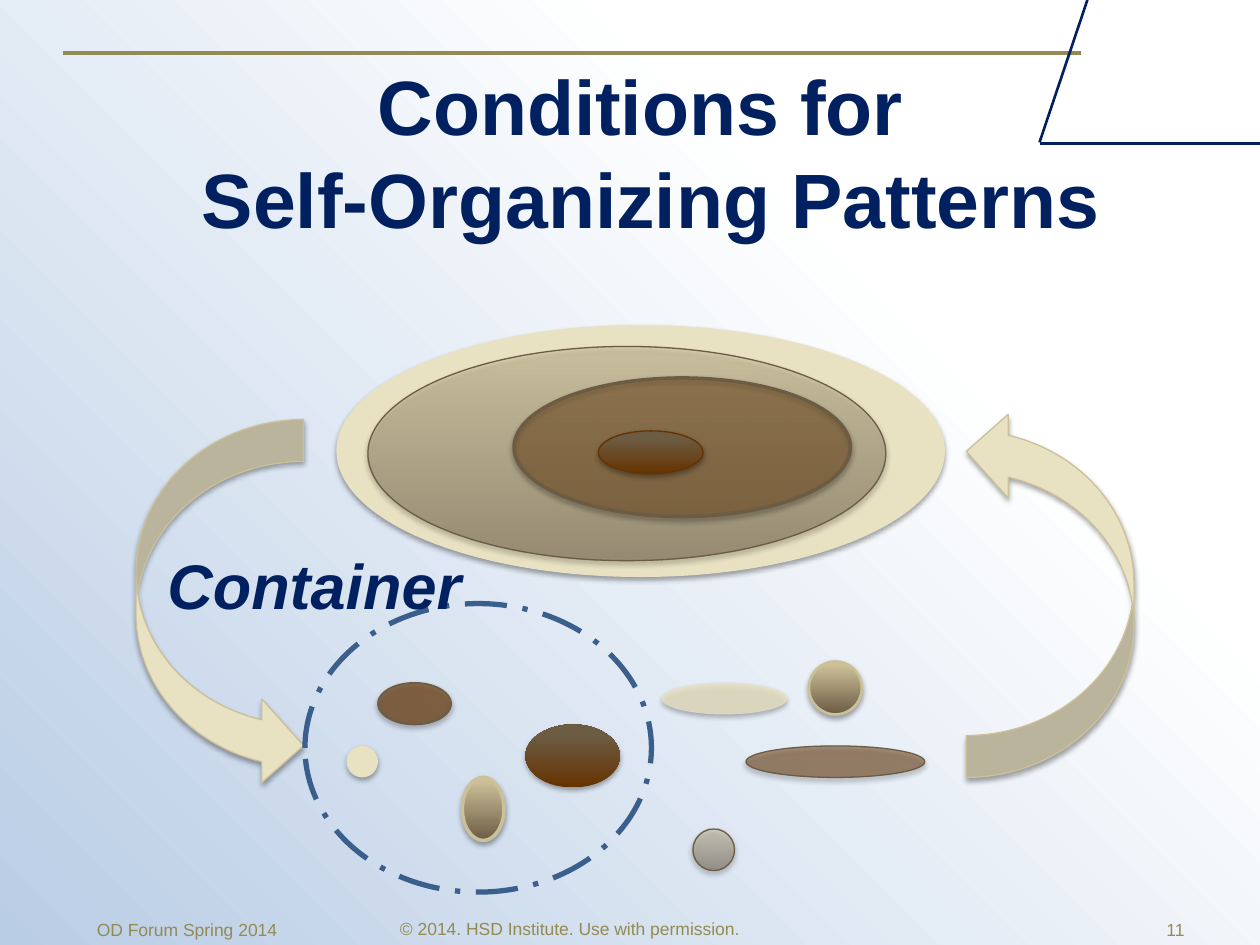
from dataclasses import dataclass
from typing import Optional

import lxml.etree
import pptx
import pptx.dml.color
import pptx.enum.dml
import pptx.enum.shapes
import pptx.enum.text
import pptx.oxml.ns
import pptx.util

Inches = pptx.util.Inches
Pt = pptx.util.Pt
RGB = pptx.dml.color.RGBColor
Align = pptx.enum.text.PP_ALIGN
Anchor = pptx.enum.text.MSO_ANCHOR
Kind = pptx.enum.shapes.MSO_SHAPE
qn = pptx.oxml.ns.qn

NAVY = RGB(0x00, 0x20, 0x60)
OLIVE = RGB(0x94, 0x8A, 0x54)
CREAM = RGB(0xE8, 0xE1, 0xC2)
SAND = RGB(0xCC, 0xC0, 0x99)
TAUPE = RGB(0x6C, 0x5C, 0x44)
BROWN = RGB(0x66, 0x33, 0x00)
BLUE = RGB(0x3A, 0x5F, 0x8C)
MIST = RGB(0xE1, 0xE8, 0xF5)
SKY = RGB(0xB9, 0xCD, 0xE5)
WHITE = RGB(0xFF, 0xFF, 0xFF)
BLACK = RGB(0x00, 0x00, 0x00)


@dataclass
class Stop:
    pos: int
    color: RGB
    alpha: int = 100


@dataclass
class Item:
    """A shadowed shape; one stop is a plain fill, more are a gradient."""
    box: tuple
    stops: list
    edge: Optional[RGB] = None
    width: float = 0.75
    kind: Kind = Kind.OVAL
    flip: bool = False


@dataclass
class Label:
    box: tuple
    text: str
    size: int = 10
    color: RGB = OLIVE
    align: Align = Align.LEFT
    anchor: Anchor = Anchor.MIDDLE
    bold: bool = False
    italic: bool = False


def plain(color: RGB, alpha: int = 100) -> list:
    return [Stop(0, color, alpha)]


STONE = [Stop(0, TAUPE), Stop(94, SAND)]
HAZE = [Stop(0, TAUPE, 50), Stop(94, SAND, 50)]
EARTH = [Stop(0, BROWN), Stop(84, TAUPE)]
ARROW = Kind.CURVED_RIGHT_ARROW

ITEMS = [
    Item((1.08, 3.33, 1.33, 2.92), plain(CREAM), SAND, kind=ARROW),
    # nested pattern
    Item((2.67, 2.58, 4.83, 2), plain(CREAM)),
    Item((2.92, 2.75, 4.11, 1.7), HAZE, TAUPE),
    Item((4.08, 3, 2.67, 1.1), plain(BROWN, 40), TAUPE, 2),
    Item((4.75, 3.42, 0.83, 0.34), EARTH, BROWN),
    Item((7.67, 3.25, 1.33, 2.92), plain(CREAM), SAND, kind=ARROW, flip=True),
    # loose parts
    Item((2.75, 5.92, 0.25, 0.25), plain(CREAM)),
    Item((3, 5.42, 0.58, 0.33), plain(BROWN, 65), TAUPE, 1),
    Item((3.67, 6.17, 0.33, 0.5), STONE, SAND, 2),
    Item((4.17, 5.75, 0.75, 0.5), EARTH),
    Item((5.25, 5.42, 1, 0.25), plain(CREAM, 80)),
    Item((5.92, 5.92, 1.42, 0.25), plain(BROWN, 50), TAUPE),
    Item((5.5, 6.58, 0.33, 0.33), HAZE + [Stop(100, MIST)], TAUPE),
    Item((6.42, 5.25, 0.42, 0.42), STONE, SAND, 1.5),
]

RULES = [
    ((0.5, 0.42, 8.58, 0.42), OLIVE, 2.25),
    ((8.63, 0, 8.25, 1.13), NAVY, 1.5),
    ((10, 1.14, 8.25, 1.14), NAVY, 1.5),
]

TITLE = Label((0.17, 0.56, 10, 1.28), "Conditions for \nSelf-Organizing Patterns",
              44, NAVY, Align.CENTER, bold=True)
LABELS = [
    Label((1.23, 4.29, 4.42, 1.92), "Container", 36, NAVY,
          anchor=Anchor.TOP, bold=True, italic=True),
    Label((0.5, 7.17, 8.08, 0.4), "© 2014. HSD Institute. Use with permission. ",
          align=Align.CENTER),
    Label((7.17, 7.18, 2.33, 0.4), "11", align=Align.RIGHT),
    Label((0.67, 7.18, 2.33, 0.4), "OD Forum Spring 2014"),
]


def add_tint(parent, color: RGB, alpha: int) -> None:
    """Add a colour element with its opacity in percent."""
    tint = lxml.etree.SubElement(parent, qn("a:srgbClr"), val=str(color))
    if alpha < 100:
        lxml.etree.SubElement(tint, qn("a:alpha"), val=str(alpha * 1000))


def paint(fill, root, stops: list, angle: int = 90) -> None:
    """Fill with the stops; the angle runs counter-clockwise."""
    if len(stops) == 1:
        fill.solid()
        fill.fore_color.rgb = stops[0].color
        node = root.find(".//" + qn("a:solidFill"))
        node.clear()
        add_tint(node, stops[0].color, stops[0].alpha)
        return
    fill.gradient()
    fill.gradient_angle = angle
    node = root.find(".//" + qn("a:gsLst"))
    node.clear()
    for stop in stops:
        part = lxml.etree.SubElement(node, qn("a:gs"), pos=str(stop.pos * 1000))
        add_tint(part, stop.color, stop.alpha)


def add_item(slide, item: Item) -> None:
    shape = slide.shapes.add_shape(item.kind, *map(Inches, item.box))
    paint(shape.fill, shape.element, item.stops)
    if item.edge is None:
        shape.line.fill.background()
    else:
        shape.line.color.rgb = item.edge
        shape.line.width = Pt(item.width)
    if item.flip:
        frame = shape.element.spPr.find(qn("a:xfrm"))
        frame.set("flipH", "1")
        frame.set("flipV", "1")
    shape.shadow.inherit = False
    glow = lxml.etree.SubElement(
        shape.element.spPr.find(qn("a:effectLst")), qn("a:outerShdw"),
        blurRad=str(Pt(3.1)), dist=str(Pt(1.8)), dir="5400000", rotWithShape="0")
    add_tint(glow, BLACK, 35)


def add_rule(slide, ends: tuple, color: RGB, width: float) -> None:
    straight = pptx.enum.shapes.MSO_CONNECTOR.STRAIGHT
    rule = slide.shapes.add_connector(straight, *map(Inches, ends))
    rule.line.color.rgb = color
    rule.line.width = Pt(width)
    lxml.etree.SubElement(rule.element.spPr, qn("a:effectLst"))


def add_ring(slide) -> None:
    ring = slide.shapes.add_shape(Kind.OVAL, *map(Inches, (2.42, 4.79, 2.75, 2.29)))
    ring.shadow.inherit = False
    ring.fill.background()
    ring.line.color.rgb = BLUE
    ring.line.width = Pt(3)
    ring.line.dash_style = pptx.enum.dml.MSO_LINE.LONG_DASH_DOT


def write(shape, label: Label) -> None:
    shape.left, shape.top, shape.width, shape.height = map(Inches, label.box)
    frame = shape.text_frame
    frame.word_wrap = True
    frame.auto_size = pptx.enum.text.MSO_AUTO_SIZE.NONE
    frame.vertical_anchor = label.anchor
    para = frame.paragraphs[0]
    para.alignment = label.align
    for num, line in enumerate(label.text.split("\n")):
        if num:
            para.add_line_break()
        run = para.add_run()
        run.text = line
        font = run.font
        font.name, font.size = "Arial", Pt(label.size)
        font.bold, font.italic = label.bold, label.italic
        font.color.rgb = label.color


def main() -> None:
    deck = pptx.Presentation()
    deck.slide_width, deck.slide_height = Inches(10), Inches(7.5)
    slide = deck.slides.add_slide(deck.slide_layouts[5])
    paint(slide.background.fill, slide.element,
          [Stop(0, WHITE), Stop(29, WHITE), Stop(100, SKY)], 225)
    for rule in RULES:
        add_rule(slide, *rule)
    for item in ITEMS:
        add_item(slide, item)
    write(slide.shapes.title, TITLE)
    add_ring(slide)
    for label in LABELS:
        write(slide.shapes.add_textbox(*map(Inches, label.box)), label)
    deck.save("out.pptx")


if __name__ == "__main__":
    main()
